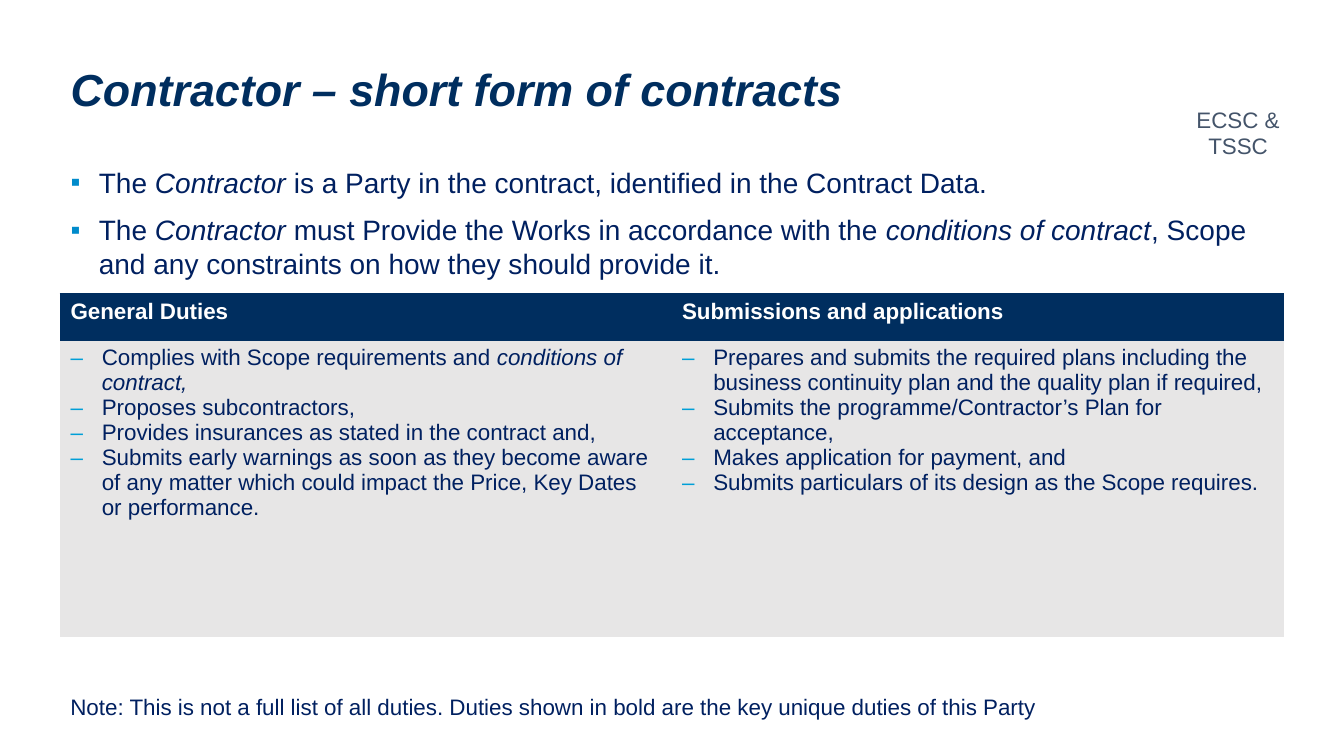
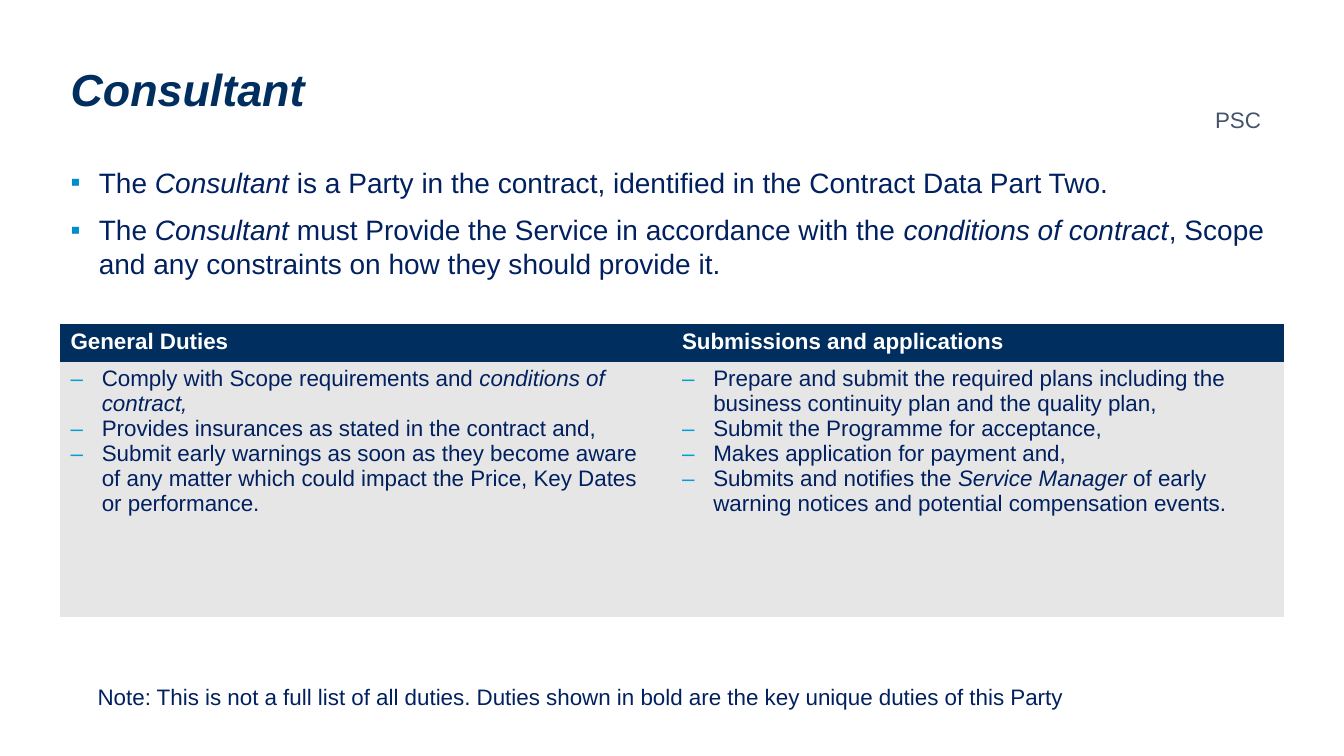
from lxml import etree
from pptx import Presentation
from pptx.dml.color import RGBColor
from pptx.enum import text as tx
from pptx.oxml import ns
from pptx.util import Inches, Pt

COLORS = {
    "navy": "002E5F", "body": "002060", "slate": "44546A", "white": "FFFFFF",
    "grey": "E7E6E6", "square": "008BCB", "dash": "009FD7",
}
NOTE = ("Note: This is not a full list of all duties. "
        "Duties shown in bold are the key unique duties of this Party")
HEADINGS = ["General Duties", "Submissions and applications"]
LEFT, WIDTH = 0.6, 12.13

SLIDES = [
    dict(
        title="Contractor – short form of contracts",
        contract="ECSC & TSSC", contract_height=0.64,
        intro=[
            "The *Contractor *is a Party in the contract, identified in the Contract Data.",
            "The *Contractor *must Provide the Works in accordance with the *conditions of contract*, "
            "Scope and any constraints on how they should provide it.",
        ],
        intro_height=4.74, table_top=2.92, rows=[0.46, 2.94], note_at=(0.6, 6.83),
        duties=[
            [
                "Complies with Scope requirements and *conditions of contract,*",
                "Proposes subcontractors,",
                "Provides insurances as stated in the contract and,",
                "Submits early warnings as soon as they become aware of any matter "
                "which could impact the Price, Key Dates or performance.",
            ],
            [
                "Prepares and submits the required plans including the business continuity plan "
                "and the quality plan if required,",
                "Submits the programme/Contractor’s Plan for acceptance,",
                "Makes application for payment, and",
                "Submits particulars of its design as the Scope requires.",
            ],
        ],
    ),
    dict(
        title="Consultant",
        contract="PSC", contract_height=0.37,
        intro=[
            "The *Consultant *is a Party in the contract, identified in the Contract Data Part Two.",
            "The *Consultant *must Provide the Service in accordance with the *conditions of contract*, "
            "Scope and any constraints on how they should provide it.",
        ],
        intro_height=4.91, table_top=3.22, rows=[0.36, 2.53], note_at=(0.87, 6.73),
        duties=[
            [
                "Comply with Scope requirements and *conditions of contract,*",
                "Provides insurances as stated in the contract and,",
                "Submit early warnings as soon as they become aware of any matter "
                "which could impact the Price, Key Dates or performance.",
            ],
            [
                "Prepare and submit the required plans including the business continuity plan "
                "and the quality plan,",
                "Submit the Programme for acceptance,",
                "Makes application for payment and,",
                "Submits and notifies the *Service Manager *of early warning notices "
                "and potential compensation events.",
            ],
        ],
    ),
]


def write(frame, lines, size=16, color="body", bold=False, italic=False, align=tx.PP_ALIGN.LEFT,
          anchor=tx.MSO_ANCHOR.TOP, wrap=True, spacing=None, gap=0, bullet=None,
          bullet_color=None, indent=0):
    frame.word_wrap = wrap
    frame.vertical_anchor = anchor
    for number, line in enumerate(lines):
        paragraph = frame.add_paragraph() if number else frame.paragraphs[0]
        paragraph.alignment = align
        paragraph.line_spacing = spacing
        paragraph.space_before = Pt(gap if number else 0)
        if bullet:
            props = paragraph._p.get_or_add_pPr()
            props.set("marL", str(Inches(indent)))
            props.set("indent", str(-Inches(indent)))
            tint = etree.SubElement(props, ns.qn("a:buClr"))
            etree.SubElement(tint, ns.qn("a:srgbClr"), val=COLORS[bullet_color])
            etree.SubElement(props, ns.qn("a:buFont"), typeface="Arial")
            etree.SubElement(props, ns.qn("a:buChar"), char=bullet)
        for part, words in enumerate(line.split("*")):
            if words:
                run = paragraph.add_run()
                run.text = words
                run.font.name = "Arial"
                run.font.size = Pt(size)
                run.font.bold = bold
                run.font.italic = italic or part % 2 == 1
                run.font.color.rgb = RGBColor.from_string(COLORS[color])


def place(shape, left, top, width, height):
    shape.left, shape.top = Inches(left), Inches(top)
    shape.width, shape.height = Inches(width), Inches(height)


prs = Presentation()
prs.slide_width, prs.slide_height = Inches(13.33), Inches(7.5)

for party in SLIDES:
    slide = prs.slides.add_slide(prs.slide_layouts[1])
    title, intro = slide.placeholders
    place(title, LEFT, 0.4, WIDTH, 1.03)
    write(title.text_frame, [party["title"]], size=32, color="navy", bold=True, italic=True,
          anchor=tx.MSO_ANCHOR.MIDDLE, spacing=0.9)
    place(intro, LEFT, 1.59, WIDTH, party["intro_height"])
    write(intro.text_frame, party["intro"], size=20, gap=10, bullet="▪",
          bullet_color="square", indent=0.28)

    contract = slide.shapes.add_textbox(Inches(11.45), Inches(1), Inches(1.66),
                                        Inches(party["contract_height"]))
    write(contract.text_frame, [party["contract"]], color="slate", align=tx.PP_ALIGN.CENTER)

    note_left, note_top = party["note_at"]
    note = slide.shapes.add_textbox(Inches(note_left), Inches(note_top), Inches(9.97), Inches(0.37))
    write(note.text_frame, [NOTE], wrap=False)

    table = slide.shapes.add_table(2, 2, Inches(LEFT), Inches(party["table_top"]), Inches(WIDTH),
                                   Inches(sum(party["rows"]))).table
    for row, height in zip(table.rows, party["rows"]):
        row.height = Inches(height)
    for column, (heading, duties) in enumerate(zip(HEADINGS, party["duties"])):
        table.columns[column].width = Inches(WIDTH / 2)
        head, body = table.cell(0, column), table.cell(1, column)
        write(head.text_frame, [heading], color="white", bold=True)
        write(body.text_frame, duties, bullet="–", bullet_color="dash", indent=0.31)
        for cell, fill in ((head, "navy"), (body, "grey")):
            props = cell._tc.get_or_add_tcPr()
            for side in ("lnL", "lnR", "lnT", "lnB"):
                edge = etree.SubElement(props, ns.qn(f"a:{side}"), w=str(Pt(1.5)))
                if cell is head and side != "lnB":
                    paint = etree.SubElement(edge, ns.qn("a:solidFill"))
                    etree.SubElement(paint, ns.qn("a:srgbClr"), val=COLORS["navy"])
                else:
                    etree.SubElement(edge, ns.qn("a:noFill"))
            cell.fill.solid()
            cell.fill.fore_color.rgb = RGBColor.from_string(COLORS[fill])

prs.save("out.pptx")
